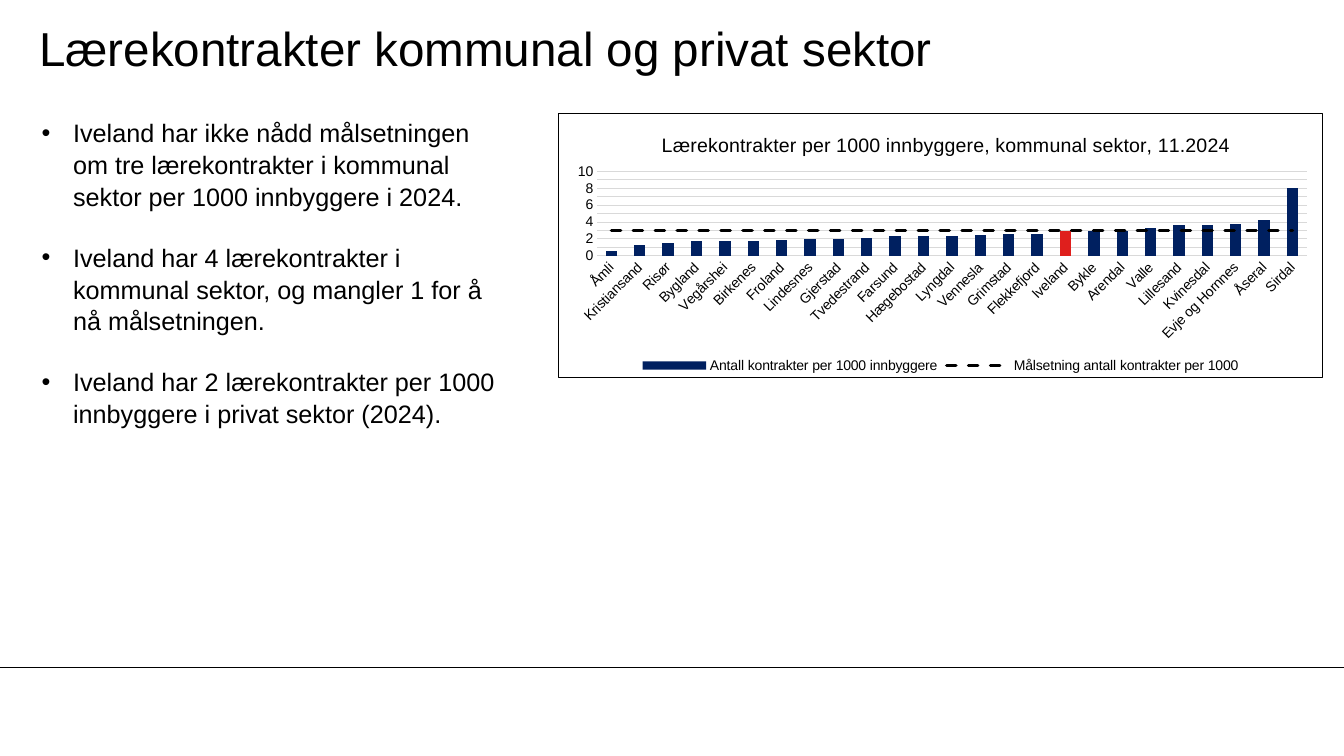
from copy import deepcopy
from dataclasses import dataclass

from lxml.etree import SubElement
from pptx import Presentation
from pptx.chart.data import CategoryChartData
from pptx.dml.color import RGBColor
from pptx.enum.chart import XL_CHART_TYPE, XL_LEGEND_POSITION, XL_MARKER_STYLE, XL_TICK_MARK
from pptx.enum.dml import MSO_LINE
from pptx.enum.shapes import MSO_CONNECTOR
from pptx.enum.text import MSO_ANCHOR, MSO_AUTO_SIZE, PP_ALIGN
from pptx.oxml import parse_xml
from pptx.oxml.ns import nsdecls, qn
from pptx.util import Pt


@dataclass(frozen=True)
class Theme:
    font: str = "Arial"
    ink: str = "000000"
    grid: str = "D9D9D9"
    bar: str = "002060"
    focus: str = "DF1F1D"
    title: int = 34
    body: int = 18
    head: int = 14
    label: int = 10


THEME = Theme()
WIDTH, HEIGHT = 960, 540
TITLE = "Lærekontrakter kommunal og privat sektor"
POINTS = [
    "Iveland har ikke nådd målsetningen om tre lærekontrakter i kommunal sektor per 1000 innbyggere i 2024.",
    "Iveland har 4 lærekontrakter i kommunal sektor, og mangler 1 for å nå målsetningen.",
    "Iveland har 2 lærekontrakter per 1000 innbyggere i privat sektor (2024).",
]
HEAD = "Lærekontrakter per 1000 innbyggere, kommunal sektor, 11.2024"
RATES = {
    "Åmli": 0.6, "Kristiansand": 1.3, "Risør": 1.5, "Bygland": 1.8, "Vegårshei": 1.8,
    "Birkenes": 1.8, "Froland": 1.9, "Lindesnes": 2, "Gjerstad": 2, "Tvedestrand": 2.1,
    "Farsund": 2.3, "Hægebostad": 2.3, "Lyngdal": 2.3, "Vennesla": 2.5, "Grimstad": 2.6,
    "Flekkefjord": 2.6, "Iveland": 2.9, "Bykle": 3, "Arendal": 3, "Valle": 3.3,
    "Lillesand": 3.6, "Kvinesdal": 3.7, "Evje og Hornnes": 3.8, "Åseral": 4.3, "Sirdal": 8,
}
GOAL = 3


def style(font, size):
    font.name = THEME.font
    font.size = Pt(size)
    font.bold = False
    font.color.rgb = RGBColor.from_string(THEME.ink)


def paint(line, color, width=0.75):
    line.color.rgb = RGBColor.from_string(color)
    line.width = Pt(width)


def place(shape, left, top, width, height):
    shape.left, shape.top = Pt(left), Pt(top)
    shape.width, shape.height = Pt(width), Pt(height)


def add_title(slide):
    shape = slide.shapes.title
    place(shape, 28, 7, 799, 54)
    frame = shape.text_frame
    frame.text = TITLE
    frame.auto_size = MSO_AUTO_SIZE.NONE
    frame.vertical_anchor = MSO_ANCHOR.MIDDLE
    frame.margin_left = frame.margin_right = frame.margin_top = frame.margin_bottom = 0
    para = frame.paragraphs[0]
    para.alignment = PP_ALIGN.LEFT
    style(para.font, THEME.title)


def add_list(slide):
    shape = slide.placeholders[1]
    place(shape, 22.5, 79.2, 338.4, 269.3)
    frame = shape.text_frame
    frame.text = "\n".join(POINTS)
    frame.auto_size = MSO_AUTO_SIZE.NONE
    for i, para in enumerate(frame.paragraphs):
        props = para._p.get_or_add_pPr()
        props.set("marL", str(Pt(22.5)))
        props.set("indent", str(Pt(-22.5)))
        SubElement(props, qn("a:buFont"), typeface=THEME.font)
        SubElement(props, qn("a:buChar"), char="•")
        para.line_spacing = 1.05
        para.space_before = Pt(21 if i else 0)
        style(para.font, THEME.body)


def add_rule(slide, top):
    rule = slide.shapes.add_connector(
        MSO_CONNECTOR.STRAIGHT, 0, Pt(top), Pt(WIDTH), Pt(top))
    paint(rule.line, THEME.ink)
    SubElement(rule._element.spPr, qn("a:effectLst"))


def layout(left, top, size=None, inner=False):
    """Make a manual chart layout from fractions of the chart area."""
    parts = [("layoutTarget", "inner")] if inner else []
    parts += [("xMode", "edge"), ("yMode", "edge"), ("x", left), ("y", top)]
    if size:
        parts += zip("wh", size)
    body = "".join(f'<c:{name} val="{val}"/>' for name, val in parts)
    return parse_xml(f'<c:layout {nsdecls("c")}><c:manualLayout>{body}'
                     '</c:manualLayout></c:layout>')


def set_layout(parent, before, node):
    """Put the layout in parent, ahead of the first child named in before."""
    for old in parent.findall(qn("c:layout")):
        parent.remove(old)
    parent.find(qn(before)).addprevious(node)


def split_goal(chart):
    """Move the second series from the columns to a line plot on the same axes."""
    bars = chart.plots[0]._element
    goal = bars.findall(qn("c:ser"))[1]
    for flag in goal.findall(qn("c:invertIfNegative")):
        goal.remove(flag)
    lines = parse_xml(f'<c:lineChart {nsdecls("c")}><c:grouping val="standard"/>'
                      '<c:varyColors val="0"/></c:lineChart>')
    lines.append(goal)
    SubElement(lines, qn("c:marker"), val="1")
    for axis in bars.findall(qn("c:axId")):
        lines.append(deepcopy(axis))
    bars.addnext(lines)


def style_axes(chart):
    names, rates = chart.category_axis, chart.value_axis
    for axis in (names, rates):
        axis.major_tick_mark = axis.minor_tick_mark = XL_TICK_MARK.NONE
        style(axis.tick_labels.font, THEME.label)
    paint(names.format.line, THEME.grid)
    names._element.find(qn("c:txPr")).find(qn("a:bodyPr")).set("rot", "-2700000")
    rates.minimum_scale, rates.maximum_scale, rates.major_unit = 0, 10, 1
    rates.tick_labels.number_format = "0"
    rates.tick_labels.number_format_is_linked = False
    rates.format.line.fill.background()
    paint(rates.major_gridlines.format.line, THEME.grid)


def style_series(chart):
    bars, lines = chart.plots
    bars.gap_width = 150
    bars.vary_by_categories = False
    rates, goal = bars.series[0], lines.series[0]
    focus = rates.points[list(RATES).index("Iveland")]
    for part, color in ((rates, THEME.bar), (focus, THEME.focus)):
        part.format.fill.solid()
        part.format.fill.fore_color.rgb = RGBColor.from_string(color)
    goal.smooth = False
    goal.marker.style = XL_MARKER_STYLE.NONE
    line = goal.format.line
    paint(line, THEME.ink, 2.25)
    line.dash_style = MSO_LINE.DASH
    line._get_or_add_ln().set("cap", "rnd")


def add_chart(slide):
    data = CategoryChartData()
    data.categories = list(RATES)
    data.add_series("Antall kontrakter per 1000 innbyggere", list(RATES.values()))
    data.add_series("Målsetning antall kontrakter per 1000", [GOAL] * len(RATES))
    chart = slide.shapes.add_chart(
        XL_CHART_TYPE.COLUMN_CLUSTERED, Pt(398.9), Pt(80.6), Pt(545.8), Pt(189.4), data).chart
    style(chart.font, THEME.label)
    split_goal(chart)
    style_axes(chart)
    style_series(chart)

    chart.has_title = True
    title = chart.chart_title
    title.text_frame.text = HEAD
    style(title.text_frame.paragraphs[0].font, THEME.head)
    set_layout(title._element, "c:overlay", layout(0.13, 0.06))
    chart.has_legend = True
    chart.legend.position = XL_LEGEND_POSITION.BOTTOM
    chart.legend.include_in_layout = False
    style(chart.legend.font, THEME.label)

    space = chart._chartSpace
    set_layout(space.chart.plotArea, "c:barChart", layout(0.05, 0.22, (0.93, 0.32), True))
    space.chart.addnext(parse_xml(
        f'<c:spPr {nsdecls("c", "a")}><a:noFill/><a:ln w="{Pt(0.75)}"><a:solidFill>'
        f'<a:srgbClr val="{THEME.ink}"/></a:solidFill></a:ln></c:spPr>'))


def main():
    deck = Presentation()
    deck.slide_width, deck.slide_height = Pt(WIDTH), Pt(HEIGHT)
    slide = deck.slides.add_slide(deck.slide_layouts[1])
    add_rule(slide, 476.6)
    add_title(slide)
    add_list(slide)
    add_chart(slide)
    deck.save("out.pptx")


if __name__ == "__main__":
    main()
